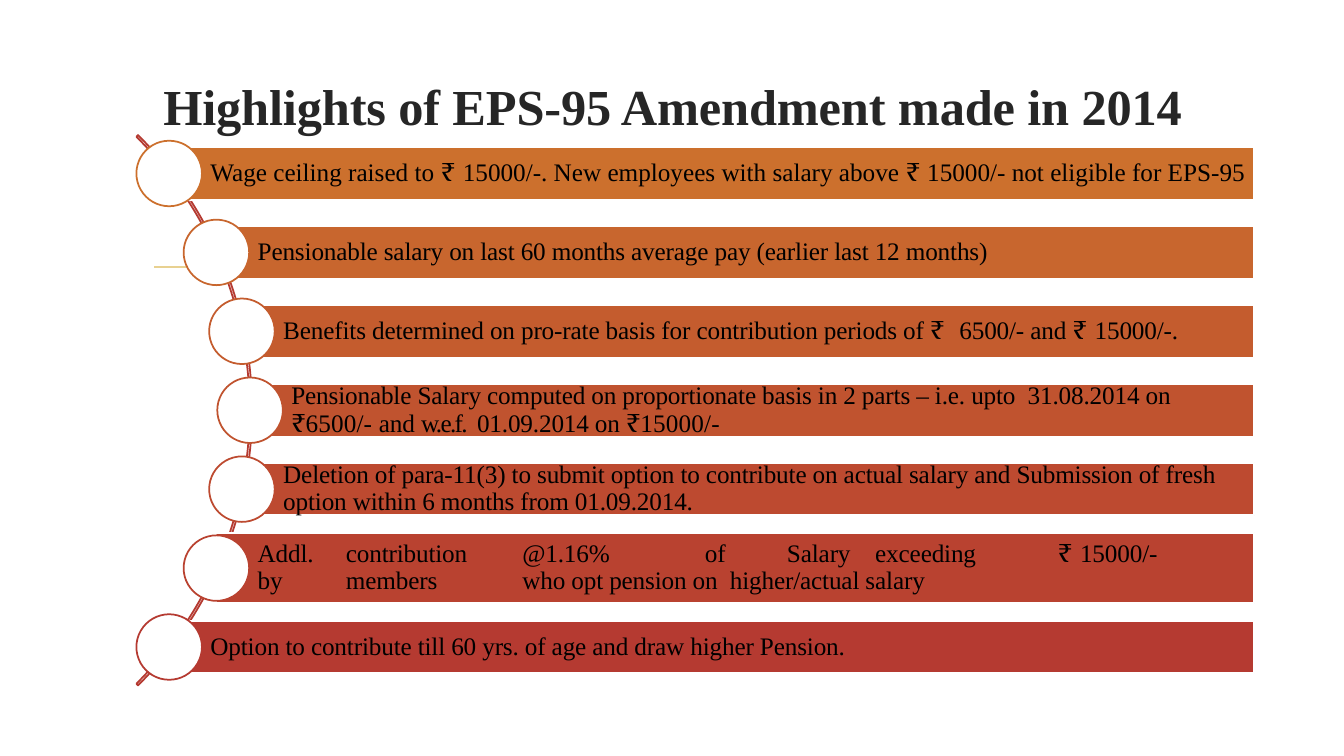
"""Build a slide of seven highlights arranged along an arc."""
from math import sqrt

from lxml import etree
from pptx import Presentation
from pptx.dml.color import RGBColor
from pptx.enum import shapes, text
from pptx.oxml.ns import qn
from pptx.util import Inches, Pt

TITLE = "Highlights of EPS-95 Amendment made in 2014"
FONT = "Times New Roman"
COLORS = {"title": "262626", "ink": "000000", "white": "FFFFFF",
          "rule": "E8D191", "arc": "B53A31"}

TIGHT, PLAIN, LOOSE, RUPEE, SQUEEZED = -10, 0, 10, 60, -120
HIGHLIGHTS = [
    ("CC702D", 0.52, [("Wage ceiling raised to ", PLAIN), ("₹ ", RUPEE),
                      ("15000/-. New employees with salary above ", PLAIN), ("₹", RUPEE),
                      (" 15000/- not eligible for EPS-95", PLAIN)]),
    ("C8662E", 0.52, [("Pensionable salary on last 60 months average pay "
                       "(earlier last 12 months)", TIGHT)]),
    ("C45C2E", 0.52, [("Benefits determined on pro-rate basis for contribution periods of ", TIGHT),
                      ("₹  ", RUPEE), ("6500/- and ", TIGHT), ("₹ ", RUPEE),
                      ("15000/-.", TIGHT)]),
    ("C0532F", 0.52, [("Pensionable Salary computed on proportionate basis in 2 parts – "
                       "i.e. upto  31.08.2014 on ", TIGHT),
                      ("₹6500/- ", LOOSE), ("and ", TIGHT), ("w.e.f.  ", SQUEEZED),
                      ("01.09.2014 on ", TIGHT), ("₹15000/-", LOOSE)]),
    ("BD4A30", 0.52, [("Deletion of para-11(3) to submit option to contribute on actual salary "
                       "and Submission of fresh option within 6 months from 01.09.2014.", TIGHT)]),
    ("B94230", 0.70, [("Addl.\tcontribution\t@1.16%\t of\tSalary\texceeding\t ", TIGHT),
                      ("₹ ", RUPEE),
                      ("15000/-\tby\tmembers\twho opt pension on  higher/actual salary", TIGHT)]),
    ("B53A31", 0.52, [("Option to contribute till 60 yrs. of age and draw higher Pension.", TIGHT)]),
]
TAB_UNIT, TAB_STEPS = 0.875, (1, 3, 5, 6, 7, 9, 11)

ARC_X, ARC_Y, ARC_RADIUS = -1.36, 4.07, 3.86
TRACK_RADIUS, PITCH = 3.84, 0.783
BAR_RIGHT, CIRCLE = 12.44, 0.65


def color(value):
    return RGBColor.from_string(value)


def add_shape(page, kind, place, fill, line):
    shape = page.shapes.add_shape(kind, *map(Inches, place))
    shape.shadow.inherit = False
    if fill:
        shape.fill.solid()
        shape.fill.fore_color.rgb = color(fill)
    else:
        shape.fill.background()
    shape.line.color.rgb = color(line)
    shape.line.width = Pt(1.25)
    return shape


def write(frame, spans, size, ink, align, bold=False, spacing=None, tabs=()):
    frame.word_wrap = True
    frame.vertical_anchor = text.MSO_ANCHOR.MIDDLE
    para = frame.paragraphs[0]
    para.alignment = align
    para.line_spacing = spacing
    if tabs:
        tab_list = etree.SubElement(para._p.get_or_add_pPr(), qn("a:tabLst"))
        for step in tabs:
            etree.SubElement(tab_list, qn("a:tab"), pos=str(Inches(step * TAB_UNIT)), algn="l")
    para.font.name = FONT
    para.font.size = Pt(size)
    para.font.bold = bold
    para.font.color.rgb = color(ink)
    for words, tracking in spans:
        span = para.add_run()
        span.text = words
        span._r.get_or_add_rPr().set("spc", str(tracking))


def add_highlight(page, index, fill, height, spans):
    offset = (index - len(HIGHLIGHTS) // 2) * PITCH
    middle = ARC_Y + offset
    left = ARC_X + sqrt(TRACK_RADIUS ** 2 - offset ** 2)
    bar = add_shape(page, shapes.MSO_SHAPE.RECTANGLE,
                    (left, middle - height / 2, BAR_RIGHT - left, height),
                    fill, COLORS["white"])
    frame = bar.text_frame
    frame.margin_left = Inches(0.41)
    frame.margin_right = frame.margin_top = frame.margin_bottom = Inches(0.05)
    tabs = TAB_STEPS if any("\t" in words for words, _ in spans) else ()
    write(frame, spans, 18, COLORS["ink"], text.PP_ALIGN.LEFT, spacing=0.9, tabs=tabs)
    add_shape(page, shapes.MSO_SHAPE.OVAL,
              (left - CIRCLE / 2, middle - CIRCLE / 2, CIRCLE, CIRCLE), COLORS["white"], fill)


def main():
    deck = Presentation()
    deck.slide_width, deck.slide_height = Inches(13.33), Inches(7.5)
    page = deck.slides.add_slide(deck.slide_layouts[6])

    rule = page.shapes.add_connector(shapes.MSO_CONNECTOR.STRAIGHT,
                                     *map(Inches, (1.53, 2.65, 11.81, 2.65)))
    rule.line.color.rgb = color(COLORS["rule"])
    rule.line.width = Pt(1.25)
    etree.SubElement(rule._element.spPr, qn("a:effectLst"))

    title = page.shapes.add_textbox(*map(Inches, (1.42, 0.68, 10.5, 0.72)))
    write(title.text_frame, [(TITLE, TIGHT)], 36, COLORS["title"],
          text.PP_ALIGN.CENTER, bold=True)

    arc = add_shape(page, shapes.MSO_SHAPE.BLOCK_ARC,
                    (ARC_X - ARC_RADIUS, ARC_Y - ARC_RADIUS, 2 * ARC_RADIUS, 2 * ARC_RADIUS),
                    None, COLORS["arc"])
    for index, value in enumerate((189, 27, 0.003)):
        arc.adjustments[index] = value

    for index, (fill, height, spans) in enumerate(HIGHLIGHTS):
        add_highlight(page, index, fill, height, spans)
    deck.save("out.pptx")


if __name__ == "__main__":
    main()
